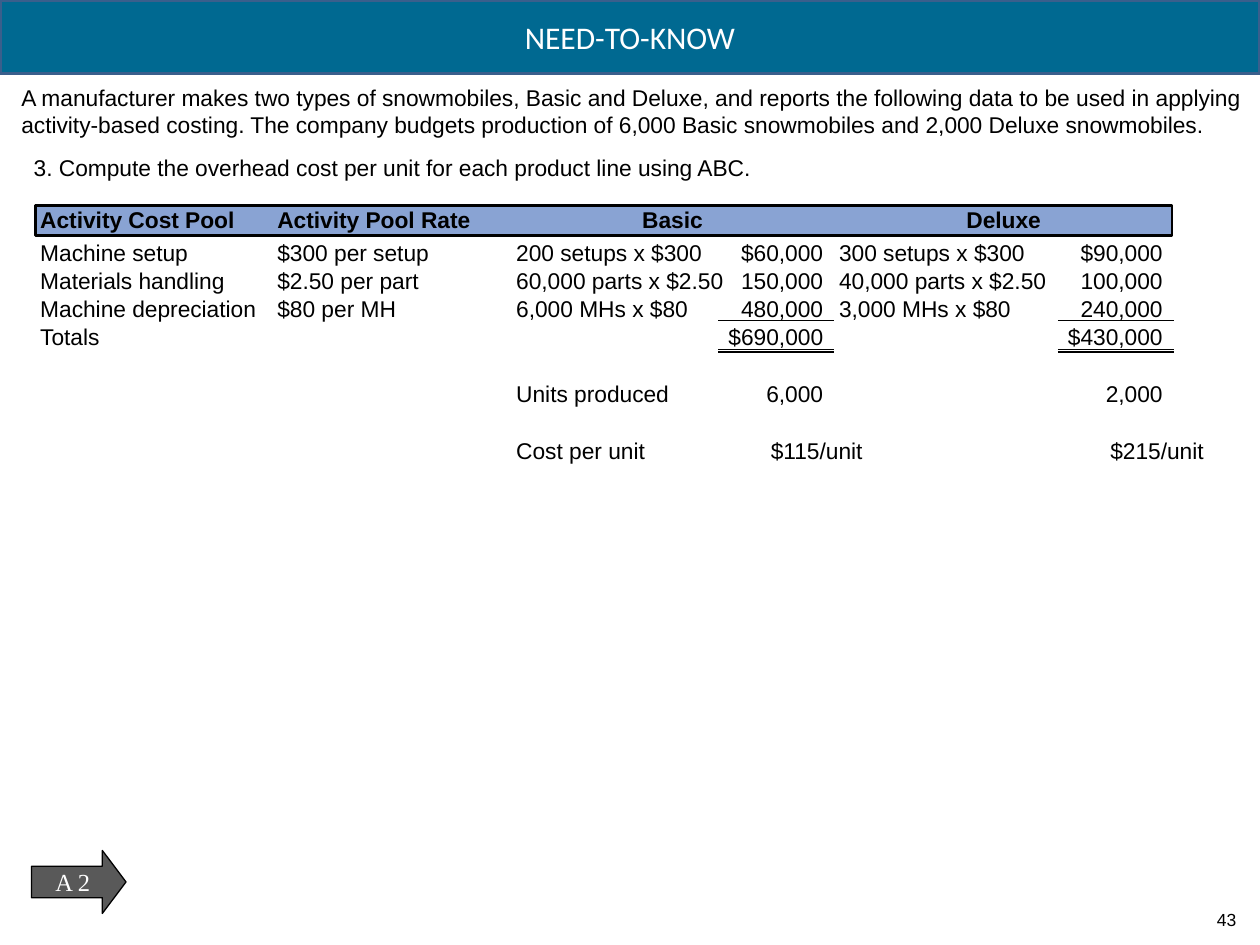
from itertools import product

from lxml import etree
from pptx import Presentation
from pptx.dml.color import RGBColor
from pptx.enum.shapes import MSO_CONNECTOR, MSO_SHAPE
from pptx.enum.text import MSO_ANCHOR, PP_ALIGN
from pptx.oxml.ns import qn
from pptx.util import Pt

LEFT, CENTER, RIGHT = PP_ALIGN.LEFT, PP_ALIGN.CENTER, PP_ALIGN.RIGHT
TOP, MIDDLE, BOTTOM = MSO_ANCHOR.TOP, MSO_ANCHOR.MIDDLE, MSO_ANCHOR.BOTTOM
COLORS = {"band": "006991", "band_edge": "3A5F8C", "header": "89A3D3",
          "arrow": "595959", "ink": "000000", "paper": "FFFFFF"}
PLAIN_TABLE = "{2D5ABB26-0587-4C30-8999-92F81FD0307C}"
NO_MARGINS = dict.fromkeys(
    ("margin_left", "margin_top", "margin_right", "margin_bottom"), 0)

INTRO = ("A manufacturer makes two types of snowmobiles, Basic and Deluxe, and "
         "reports the following data to be used in applying activity-based "
         "costing. The company budgets production of 6,000 Basic snowmobiles "
         "and 2,000 Deluxe snowmobiles.")
QUESTION = "3. Compute the overhead cost per unit for each product line using ABC."

# The narrow last column gives the Deluxe cost per unit room past the header
COST_ROWS = [
    ("Activity Cost Pool", "Activity Pool Rate", "Basic", "", "Deluxe", "", ""),
    ("Machine setup", "$300 per setup", "200 setups x $300", "$60,000",
     "300 setups x $300", "$90,000", ""),
    ("Materials handling", "$2.50 per part", "60,000 parts x $2.50", "150,000",
     "40,000 parts x $2.50", "100,000", ""),
    ("Machine depreciation", "$80 per MH", "6,000 MHs x $80", "480,000",
     "3,000 MHs x $80", "240,000", ""),
    ("Totals", "", "", "$690,000", "", "$430,000", ""),
    ("", "", "Units produced", "6,000", "", "2,000", ""),
    ("", "", "Cost per unit", "$115/unit", "", "$215/unit", ""),
]
COLUMN_WIDTHS = (135.5, 136.5, 122.5, 62, 132, 62, 19.5)
ROW_HEIGHTS = (18, 17, 16, 16, 16, 33, 32.5)
PRODUCT_COLUMNS = (2, 4)
AMOUNT_COLUMNS = (3, 5)
HEADER_ROW, UNIT_COST_ROW = 0, len(COST_ROWS) - 1


def rgb(name):
    return RGBColor.from_string(COLORS[name])


def set_attributes(target, values):
    for name, value in values.items():
        setattr(target, name, value)


def write(frame, text, align=LEFT, color="ink", **font):
    """Write one paragraph into a text frame."""
    paragraph = frame.paragraphs[0]
    paragraph.alignment = align
    run = paragraph.add_run()
    run.text = text
    set_attributes(run.font, {"name": "Arial", "size": Pt(13), **font})
    run.font.color.rgb = rgb(color)
    return paragraph


def paint(shape, fill, line, width):
    shape.shadow.inherit = False
    if fill:
        shape.fill.solid()
        shape.fill.fore_color.rgb = rgb(fill)
    else:
        shape.fill.background()
    shape.line.color.rgb = rgb(line)
    shape.line.width = Pt(width)


def add_label(slide, box, text, frame_values=None, **style):
    frame = slide.shapes.add_textbox(*map(Pt, box)).text_frame
    set_attributes(frame, {"word_wrap": True, **(frame_values or {})})
    return write(frame, text, **style)


def add_heading(slide, box):
    title = slide.shapes.title
    edges = dict(zip(("left", "top", "width", "height"), map(Pt, box)))
    set_attributes(title, edges)
    paint(title, "band", "band_edge", 2)
    title.text_frame.vertical_anchor = MIDDLE
    write(title.text_frame, "NEED-TO-KNOW", CENTER, "paper",
          name="Calibri", size=Pt(18))


def add_problem(slide, box):
    left, top, width, height = box
    intro = add_label(slide, (left, top, width, 32), INTRO, NO_MARGINS)
    intro.line_spacing = Pt(15.84)
    add_label(slide, (left, top + 37, 490, height - 37), QUESTION)


def add_rule(slide, left, right, y):
    rule = slide.shapes.add_connector(
        MSO_CONNECTOR.STRAIGHT, Pt(left), Pt(y), Pt(right), Pt(y))
    rule.line.color.rgb = rgb("ink")
    rule.line.width = Pt(0.8)
    etree.SubElement(rule._element.spPr, qn("a:effectLst"))


def fill_cost_cell(cell, row, column):
    """Format one cell by the part its row and column play."""
    is_header = row == HEADER_ROW
    is_amount = column in AMOUNT_COLUMNS
    is_unit_cost = is_amount and row == UNIT_COST_ROW
    margins = dict(NO_MARGINS)
    if is_unit_cost:
        margins["margin_left"] = Pt(26)
    elif is_amount:
        margins["margin_right"] = Pt(6.2)
    elif not (is_header and column in PRODUCT_COLUMNS):
        margins["margin_left"] = Pt(3)
    set_attributes(cell, {**margins,
                          "vertical_anchor": MIDDLE if is_header else BOTTOM})
    if is_header and column < len(COLUMN_WIDTHS) - 1:
        cell.fill.solid()
        cell.fill.fore_color.rgb = rgb("header")
    else:
        cell.fill.background()

    align = LEFT
    if is_header and column in PRODUCT_COLUMNS:
        align = CENTER
    elif is_amount and not is_unit_cost:
        align = RIGHT
    text = COST_ROWS[row][column]
    if text:
        write(cell.text_frame, text, align, bold=is_header)
    else:
        # Small end mark, so that empty cells do not stretch the row
        etree.SubElement(cell.text_frame.paragraphs[0]._p,
                         qn("a:endParaRPr"), sz="1000")


def add_cost_table(slide, box):
    left, top = box[:2]
    table = slide.shapes.add_table(
        len(ROW_HEIGHTS), len(COLUMN_WIDTHS), *map(Pt, box)).table
    set_attributes(table, {"first_row": False, "horz_banding": False})
    table._tbl.tblPr.find(qn("a:tableStyleId")).text = PLAIN_TABLE
    for column, width in zip(table.columns, COLUMN_WIDTHS):
        column.width = Pt(width)
    for row, height in zip(table.rows, ROW_HEIGHTS):
        row.height = Pt(height)
    for row, column in product(range(len(ROW_HEIGHTS)),
                               range(len(COLUMN_WIDTHS))):
        fill_cost_cell(table.cell(row, column), row, column)
    for row, starts in ((HEADER_ROW, PRODUCT_COLUMNS),
                        (UNIT_COST_ROW, AMOUNT_COLUMNS)):
        for start in starts:
            table.cell(row, start).merge(table.cell(row, start + 1))

    # Header outline
    outline = slide.shapes.add_shape(
        MSO_SHAPE.RECTANGLE, Pt(left + 0.3), Pt(top + 0.4),
        Pt(sum(COLUMN_WIDTHS[:-1]) - 1), Pt(17.2))
    paint(outline, None, "ink", 1.5)

    # Single rule above and double rule below each total
    for column in AMOUNT_COLUMNS:
        right = left + sum(COLUMN_WIDTHS[:column + 1])
        for offset in (66.2, 82.6, 84.2):
            add_rule(slide, right - 66, right + 0.3, top + offset)


def add_footer(slide, box):
    left, top, width, height = box
    arrow = slide.shapes.add_shape(
        MSO_SHAPE.RIGHT_ARROW, Pt(left), Pt(top), Pt(54), Pt(36))
    arrow.adjustments[1] = 0.375
    paint(arrow, "arrow", "ink", 0.75)
    set_attributes(arrow.text_frame,
                   {"word_wrap": False, "vertical_anchor": MIDDLE})
    write(arrow.text_frame, "A 2", CENTER, "paper",
          name="Times New Roman", size=Pt(14))
    add_label(slide, (left + width - 42, top + height - 18, 42, 18), "43",
              {"vertical_anchor": TOP}, align=RIGHT, size=Pt(10))


def main():
    deck = Presentation()
    deck.slide_width, deck.slide_height = Pt(720), Pt(540)
    slide = deck.slides.add_slide(deck.slide_layouts[5])
    add_heading(slide, (0, 0, 720, 42))
    add_problem(slide, (12.2, 47.4, 702, 60))
    add_cost_table(slide, (20, 117, sum(COLUMN_WIDTHS), sum(ROW_HEIGHTS)))
    add_footer(slide, (18, 486, 695.5, 48))
    deck.save("out.pptx")


if __name__ == "__main__":
    main()
